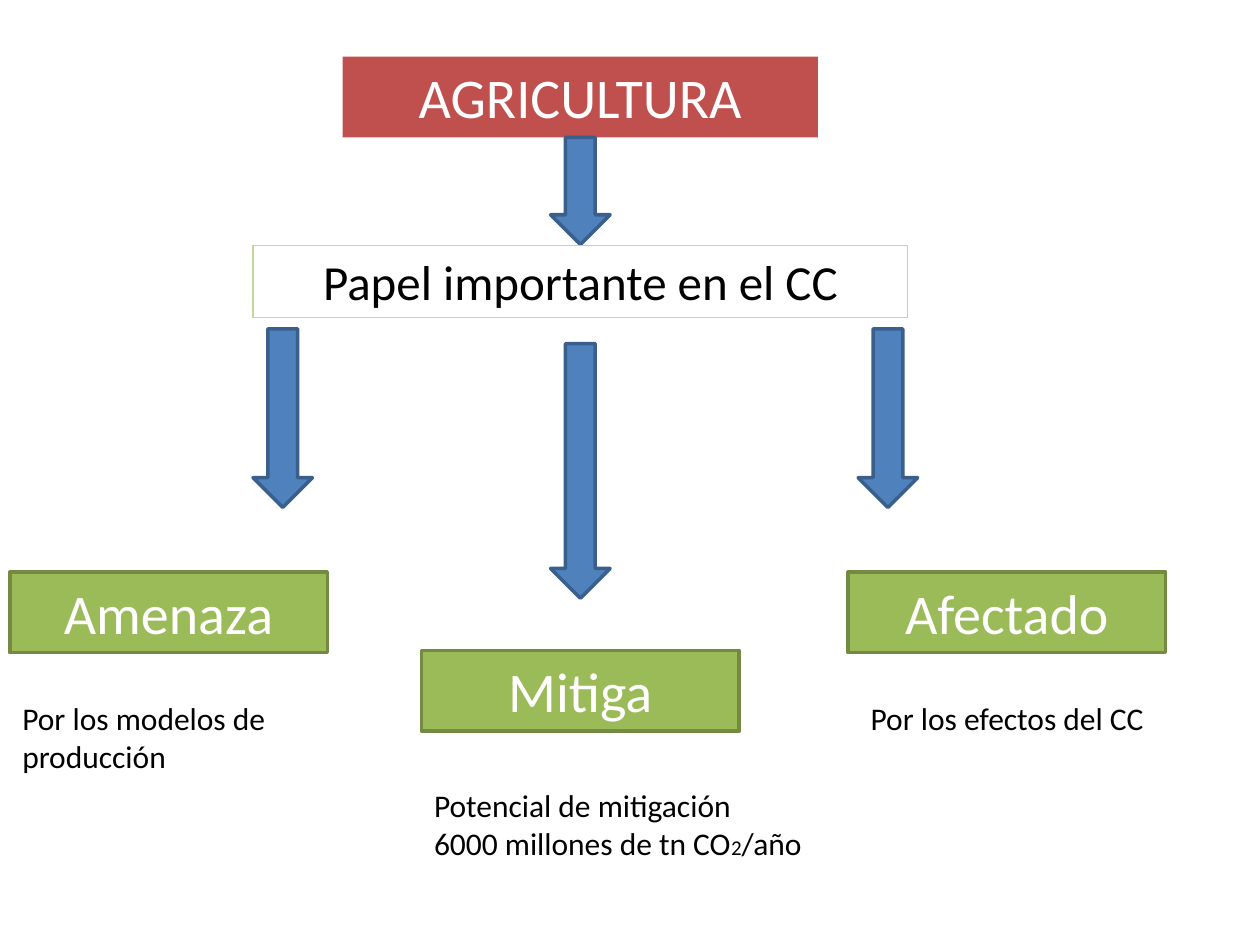
from dataclasses import dataclass
from typing import Optional

import pptx
import pptx.dml.color
import pptx.enum.shapes
import pptx.enum.text
import pptx.util

Cm = pptx.util.Cm
Shapes = pptx.enum.shapes.MSO_SHAPE
Align = pptx.enum.text.PP_ALIGN


@dataclass(frozen=True)
class Theme:
    font: str = "Calibri"
    red: str = "C0504D"
    blue: str = "4F81BD"
    blue_edge: str = "3A5F8C"
    green: str = "9BBB59"
    green_edge: str = "738A42"
    pale_green: str = "C3D69B"
    white: str = "FFFFFF"
    black: str = "000000"
    heading: float = 32
    statement: float = 28
    body: float = 18
    subscript: float = 12
    edge: float = 2
    thin_edge: float = 0.75


THEME = Theme()


@dataclass(frozen=True)
class Area:
    """Left, top, width and height in centimetres."""
    left: float
    top: float
    width: float
    height: float

    def lengths(self) -> tuple:
        return Cm(self.left), Cm(self.top), Cm(self.width), Cm(self.height)


@dataclass(frozen=True)
class Span:
    text: str
    size: float = THEME.body


@dataclass(frozen=True)
class Role:
    title: str
    title_area: Area
    note: tuple[tuple[Span, ...], ...]
    note_area: Area


CENTRE = 11.7
ROLE_WIDTH, BAR_HEIGHT = 6.4, 1.63
ARROW_WIDTH = 1.2

ARROWS = (
    Area(CENTRE - ARROW_WIDTH / 2, 2.77, ARROW_WIDTH, 2.16),
    Area(5.1, 6.63, ARROW_WIDTH, 3.6),
    Area(CENTRE - ARROW_WIDTH / 2, 6.93, ARROW_WIDTH, 5.13),
    Area(17.3, 6.63, ARROW_WIDTH, 3.6),
)

ROLES = (
    Role("Amenaza", Area(0.2, 11.53, ROLE_WIDTH, BAR_HEIGHT),
         ((Span("Por los modelos de producción"),),),
         Area(0.2, 13.97, 7.0, 1.8)),
    Role("Mitiga", Area(CENTRE - ROLE_WIDTH / 2, 13.11, ROLE_WIDTH, BAR_HEIGHT),
         ((Span("Potencial de mitigación"),),
          (Span("6000 millones de tn CO"), Span("2", THEME.subscript), Span("/año"))),
         Area(CENTRE - ROLE_WIDTH / 2, 15.72, 8.28, 2.64)),
    Role("Afectado", Area(17.1, 11.53, ROLE_WIDTH, BAR_HEIGHT),
         ((Span("Por los efectos del CC"),),),
         Area(17.3, 13.97, 6.6, 1.02)),
)


def rgb(value: str) -> pptx.dml.color.RGBColor:
    return pptx.dml.color.RGBColor.from_string(value)


def write(box, lines, *, color: str = THEME.black, align=Align.LEFT) -> None:
    """Fill a box with lines, each a sequence of spans."""
    frame = box.text_frame
    frame.word_wrap = True
    frame.auto_size = pptx.enum.text.MSO_AUTO_SIZE.SHAPE_TO_FIT_TEXT
    frame.vertical_anchor = pptx.enum.text.MSO_ANCHOR.TOP
    for index, line in enumerate(lines):
        para = frame.add_paragraph() if index else frame.paragraphs[0]
        para.alignment = align
        for span in line:
            run = para.add_run()
            run.text = span.text
            run.font.name = THEME.font
            run.font.size = pptx.util.Pt(span.size)
            run.font.color.rgb = rgb(color)


def draw_shape(page, kind, area: Area, *, fill: Optional[str] = None,
               edge: Optional[str] = None, edge_width: float = THEME.edge):
    shape = page.shapes.add_shape(kind, *area.lengths())
    shape.shadow.inherit = False
    if fill:
        shape.fill.solid()
        shape.fill.fore_color.rgb = rgb(fill)
    else:
        shape.fill.background()
    if edge:
        shape.line.color.rgb = rgb(edge)
        shape.line.width = pptx.util.Pt(edge_width)
    else:
        shape.line.fill.background()
    return shape


def draw_role(page, role: Role) -> None:
    bar = draw_shape(page, Shapes.RECTANGLE, role.title_area,
                     fill=THEME.green, edge=THEME.green_edge)
    write(bar, [[Span(role.title, THEME.heading)]], color=THEME.white, align=Align.CENTER)
    write(page.shapes.add_textbox(*role.note_area.lengths()), role.note)


def main() -> None:
    deck = pptx.Presentation()
    deck.slide_width, deck.slide_height = Cm(25.4), Cm(19.05)
    page = deck.slides.add_slide(deck.slide_layouts[6])

    topic = draw_shape(page, Shapes.RECTANGLE, Area(6.91, 1.14, 9.58, BAR_HEIGHT),
                       fill=THEME.red)
    write(topic, [[Span("AGRICULTURA", THEME.heading)]],
          color=THEME.white, align=Align.CENTER)

    for area in ARROWS:
        draw_shape(page, Shapes.DOWN_ARROW, area, fill=THEME.blue, edge=THEME.blue_edge)
    for role in ROLES:
        draw_role(page, role)

    statement = draw_shape(page, Shapes.RECTANGLE, Area(5.1, 4.95, 13.2, 1.45),
                           edge=THEME.pale_green, edge_width=THEME.thin_edge)
    write(statement, [[Span("Papel importante en el CC", THEME.statement)]],
          align=Align.CENTER)

    deck.save("out.pptx")


if __name__ == "__main__":
    main()
